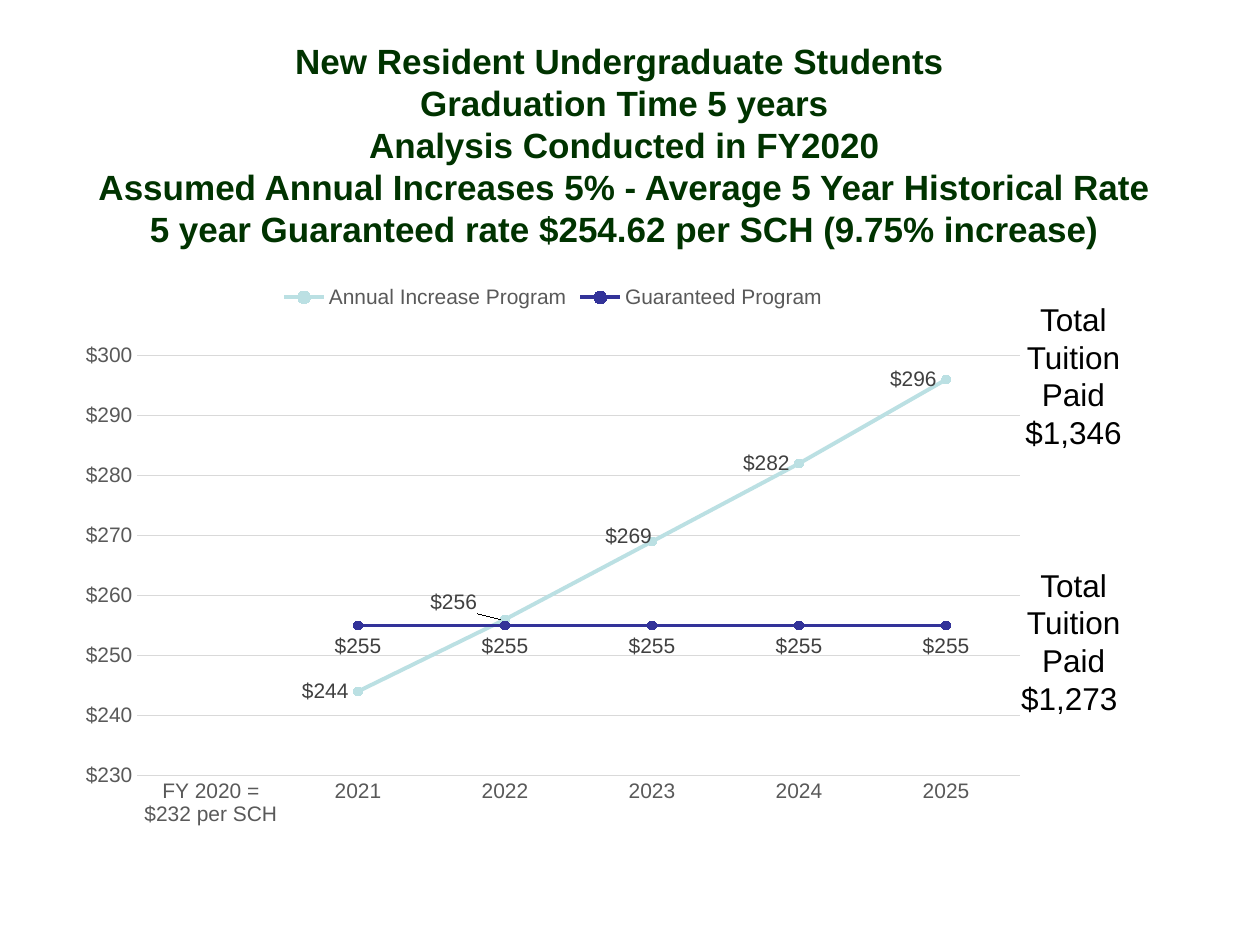
from dataclasses import dataclass

import lxml.etree
import pptx
import pptx.chart.data
import pptx.dml.color
import pptx.enum.chart
import pptx.enum.text
import pptx.oxml
import pptx.oxml.ns
import pptx.util

Pt = pptx.util.Pt
qn = pptx.oxml.ns.qn


@dataclass(frozen=True)
class Theme:
    font: str = "Arial"
    title: str = "003300"
    text: str = "000000"
    axis: str = "595959"
    label: str = "404040"
    grid: str = "D9D9D9"
    annual: str = "BBE0E3"
    guaranteed: str = "333399"
    title_size: int = 20
    note_size: int = 18
    chart_size: int = 12


THEME = Theme()
DOLLARS = '"$"#,##0'
YEARS = ["FY 2020 = $232 per SCH", "2021", "2022", "2023", "2024", "2025"]
ANNUAL_RATES = [None, 244, 256, 269, 282, 296]
GUARANTEED_RATES = [None] + [255] * 5
TITLE = [
    "New Resident Undergraduate Students ",
    "Graduation Time 5 years",
    "Analysis Conducted in FY2020",
    "Assumed Annual Increases 5% - Average 5 Year Historical Rate",
    "5 year Guaranteed rate $254.62 per SCH (9.75% increase)",
]


def rgb(color):
    return pptx.dml.color.RGBColor.from_string(color)


def style_font(font, size, color, bold=False):
    font.name = THEME.font
    font.size = Pt(size)
    font.bold = bold
    font.color.rgb = rgb(color)


def add_text(page, paragraphs, left, top, width, height, *, size, color=THEME.text,
             bold=False, anchor=pptx.enum.text.MSO_ANCHOR.TOP):
    """Add centred paragraphs, each given as a list of its lines."""
    box = page.shapes.add_textbox(Pt(left), Pt(top), Pt(width), Pt(height))
    frame = box.text_frame
    frame.word_wrap = True
    frame.vertical_anchor = anchor
    for index, lines in enumerate(paragraphs):
        para = frame.paragraphs[0] if index == 0 else frame.add_paragraph()
        para.alignment = pptx.enum.text.PP_ALIGN.CENTER
        for number, line in enumerate(lines):
            if number:
                para.add_line_break()
            span = para.add_run()
            span.text = line
            style_font(span.font, size, color, bold)


def manual_layout(**values):
    """Return a c:layout element holding the given entries in order."""
    layout = lxml.etree.Element(qn("c:layout"))
    manual = lxml.etree.SubElement(layout, qn("c:manualLayout"))
    for name, value in values.items():
        lxml.etree.SubElement(manual, qn("c:" + name)).set("val", str(value))
    return layout


def style_axes(chart):
    for axis in (chart.category_axis, chart.value_axis):
        axis.major_tick_mark = pptx.enum.chart.XL_TICK_MARK.NONE
        style_font(axis.tick_labels.font, THEME.chart_size, THEME.axis)
    values = chart.value_axis
    values.minimum_scale, values.maximum_scale, values.major_unit = 230, 300, 10
    values.tick_labels.number_format = DOLLARS
    values.tick_labels.number_format_is_linked = False
    values.format.line.fill.background()
    for line in (values.major_gridlines.format.line, chart.category_axis.format.line):
        line.color.rgb = rgb(THEME.grid)
        line.width = Pt(0.75)


def style_series(series, color, position):
    series.smooth = False
    series.format.line.color.rgb = rgb(color)
    series.format.line.width = Pt(2.25)
    marker = series.marker
    marker.style = pptx.enum.chart.XL_MARKER_STYLE.CIRCLE
    marker.size = 5
    marker.format.fill.solid()
    marker.format.fill.fore_color.rgb = rgb(color)
    marker.format.line.color.rgb = rgb(color)
    labels = series.data_labels
    labels.show_value = True
    labels.position = position
    labels.number_format = DOLLARS
    labels.number_format_is_linked = False
    style_font(labels.font, THEME.chart_size, THEME.label)


def shift_label(series, index, across, down):
    """Move one label by fractions of the chart's width and height."""
    label = series.points[index].data_label
    style_font(label.font, THEME.chart_size, THEME.label)
    label.position = pptx.enum.chart.XL_LABEL_POSITION.LEFT
    entry = series.data_labels._element.xpath(f"c:dLbl[c:idx/@val='{index}']")[0]
    number = lxml.etree.Element(qn("c:numFmt"), formatCode=DOLLARS, sourceLinked="0")
    entry.insert(1, manual_layout(x=across, y=down))
    entry.insert(2, number)


def show_leader_lines(series):
    series.data_labels._element.append(pptx.oxml.parse_xml(
        '<c:extLst xmlns:c="http://schemas.openxmlformats.org/drawingml/2006/chart">'
        '<c:ext uri="{CE6537A1-D6FC-4f65-9D91-7224C49458BB}" '
        'xmlns:c15="http://schemas.microsoft.com/office/drawing/2012/chart">'
        '<c15:showLeaderLines val="1"/></c:ext></c:extLst>'))


def add_rate_chart(page, left, top, width, height):
    data = pptx.chart.data.CategoryChartData(number_format=DOLLARS)
    data.categories = YEARS
    data.add_series("Annual Increase Program", ANNUAL_RATES)
    data.add_series("Guaranteed Program", GUARANTEED_RATES)
    chart = page.shapes.add_chart(
        pptx.enum.chart.XL_CHART_TYPE.LINE_MARKERS,
        Pt(left), Pt(top), Pt(width), Pt(height), data).chart
    style_font(chart.font, THEME.chart_size, THEME.text)
    chart.has_title = False
    chart.has_legend = True
    chart.legend.position = pptx.enum.chart.XL_LEGEND_POSITION.TOP
    chart.legend.include_in_layout = False
    style_font(chart.legend.font, THEME.chart_size, THEME.axis)
    style_axes(chart)

    plot = chart.plots[0]
    plot.vary_by_categories = False
    annual, guaranteed = plot.series
    places = pptx.enum.chart.XL_LABEL_POSITION
    style_series(annual, THEME.annual, places.LEFT)
    style_series(guaranteed, THEME.guaranteed, places.BELOW)
    shift_label(annual, 2, -0.02, -0.03)
    shift_label(annual, 3, 0.01, -0.01)
    show_leader_lines(annual)

    area = chart._chartSpace.chart.plotArea
    for layout in area.findall(qn("c:layout")):
        area.remove(layout)
    area.insert(0, manual_layout(
        layoutTarget="inner", xMode="edge", yMode="edge",
        x=29 / width, y=47.7 / height, w=505 / width, h=240 / height))


def main():
    deck = pptx.Presentation()
    deck.slide_width, deck.slide_height = Pt(720), Pt(540)
    page = deck.slides.add_slide(deck.slide_layouts[6])
    add_rate_chart(page, 49, 155.5, 534, 327)
    paid = [["Total Tuition"], ["Paid"]]
    add_text(page, paid + [["$1,273 "]], 563.8, 319.7, 99.4, 94.3, size=THEME.note_size)
    add_text(page, paid + [["$1,346"]], 572, 167.8, 82.8, 94.3, size=THEME.note_size)
    add_text(page, [TITLE], 23.8, 29.8, 666, 105.8, size=THEME.title_size,
             color=THEME.title, bold=True, anchor=pptx.enum.text.MSO_ANCHOR.MIDDLE)
    deck.save("out.pptx")


if __name__ == "__main__":
    main()
